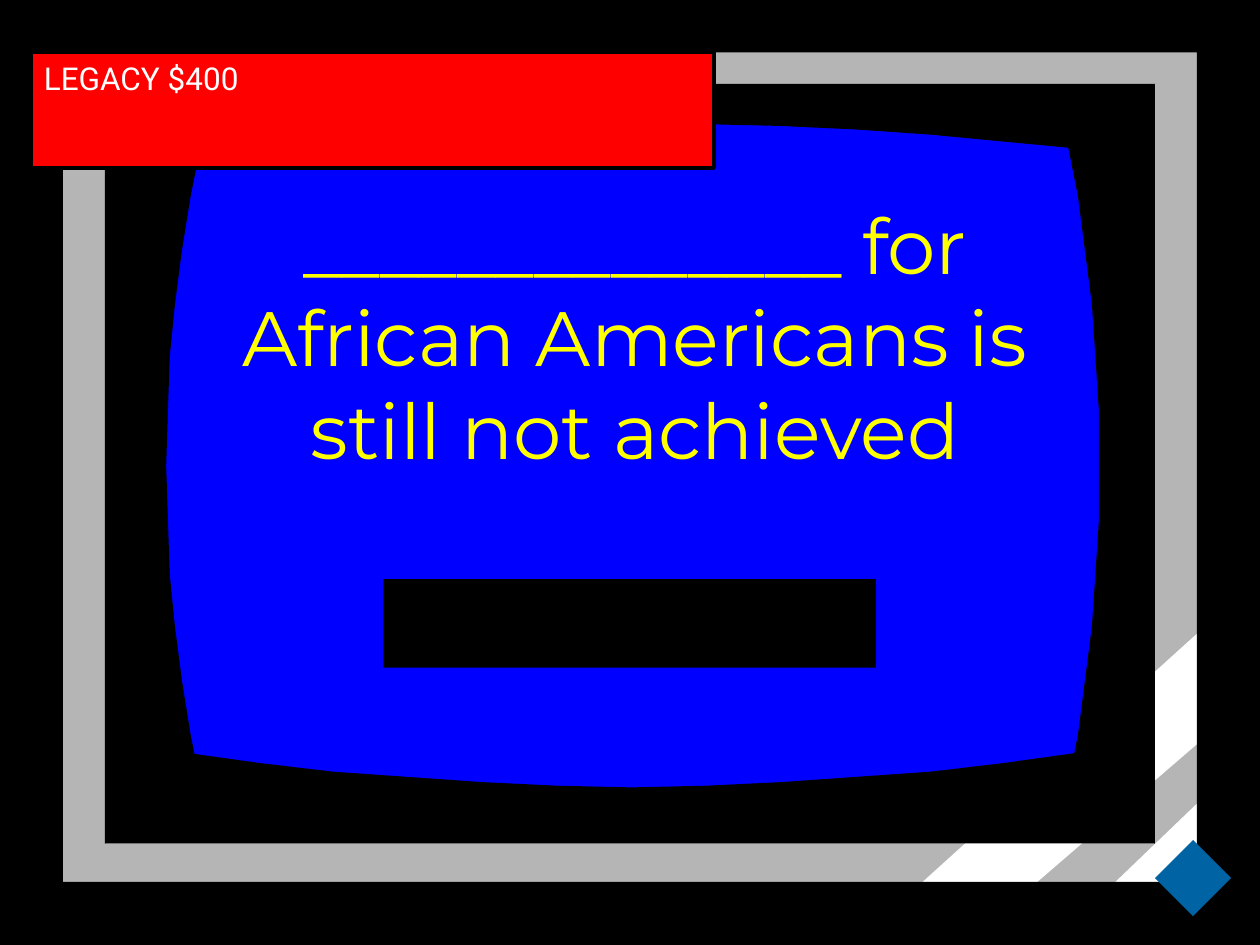
from dataclasses import dataclass

import pptx
import pptx.dml.color
import pptx.enum.shapes
import pptx.enum.text
import pptx.shapes.autoshape
import pptx.slide
import pptx.text.text
import pptx.util

BLACK = pptx.dml.color.RGBColor(0x00, 0x00, 0x00)
WHITE = pptx.dml.color.RGBColor(0xFF, 0xFF, 0xFF)
GREY = pptx.dml.color.RGBColor(0xB5, 0xB5, 0xB5)
BLUE = pptx.dml.color.RGBColor(0x00, 0x00, 0xFF)
YELLOW = pptx.dml.color.RGBColor(0xFF, 0xFF, 0x00)
RED = pptx.dml.color.RGBColor(0xFF, 0x00, 0x00)
BADGE_BLUE = pptx.dml.color.RGBColor(0x00, 0x63, 0xA3)

RECTANGLE = pptx.enum.shapes.MSO_SHAPE.RECTANGLE
DIAMOND = pptx.enum.shapes.MSO_SHAPE.DIAMOND
CURVE_STEPS = 12

Point = tuple[float, float]


@dataclass(frozen=True)
class Block:
    left: float
    top: float
    width: float
    height: float
    color: pptx.dml.color.RGBColor
    preset: pptx.enum.shapes.MSO_SHAPE = RECTANGLE


@dataclass(frozen=True)
class Outline:
    points: list[Point]
    color: pptx.dml.color.RGBColor


@dataclass(frozen=True)
class ScreenEdge:
    corners: tuple[Point, Point]
    apex: float
    bend: float
    middle: float
    reach: float
    vertical: bool


FRAME = Block(16.5, 9.5, 688.5, 530.5, GREY)
STRIPES = [
    Outline([(558.5, 533.5), (703.5, 407.5), (703.5, 344), (494, 533.5)], WHITE),
    Outline([(703.5, 487.5), (651.5, 533.5), (604, 535.5), (703.5, 440)], WHITE),
]
SCREEN = Block(77, 63.5, 552.5, 388.5, BLUE)

TOP_LEFT, TOP_RIGHT = (60.5, 47.5), (660.5, 47.5)
BOTTOM_LEFT, BOTTOM_RIGHT = (60.5, 482), (660.5, 482)
SCREEN_EDGES = [
    ScreenEdge((TOP_LEFT, BOTTOM_LEFT), 95, 20, 266, 184.5, True),
    ScreenEdge((TOP_RIGHT, BOTTOM_RIGHT), 628.5, -18.5, 266, 184.5, True),
    ScreenEdge((TOP_LEFT, TOP_RIGHT), 70.5, 14.5, 361, 256, False),
    ScreenEdge((BOTTOM_LEFT, BOTTOM_RIGHT), 449.5, -20, 361, 256, False),
]
SURROUND = [
    Outline([(0, 0), (0, 540), (720, 540), (700.5, 512), (36, 512), (36, 0)], BLACK),
    Outline([(720, 540), (720, 0), (0, 0), (18.5, 29.5), (684, 29.5), (684, 540)], BLACK),
]
BOTTOM_BAR = Block(14.5, 504, 690.5, 36, BLACK)
BADGE = Block(660, 480, 43.5, 43.5, BADGE_BLUE, DIAMOND)
CATEGORY = Block(18, 30, 390, 66, RED)
ANSWER_COVER = Block(219, 331, 281.5, 50.5, BLACK)


def paint(shape: pptx.shapes.autoshape.Shape, color: pptx.dml.color.RGBColor) -> None:
    shape.shadow.inherit = False
    shape.fill.solid()
    shape.fill.fore_color.rgb = color
    shape.line.fill.background()


def draw_block(slide: pptx.slide.Slide, block: Block) -> pptx.shapes.autoshape.Shape:
    lengths = (block.left, block.top, block.width, block.height)
    shape = slide.shapes.add_shape(block.preset, *map(pptx.util.Pt, lengths))
    paint(shape, block.color)
    return shape


def draw_outline(slide: pptx.slide.Slide, outline: Outline) -> None:
    start, *rest = outline.points
    builder = slide.shapes.build_freeform(*start, scale=pptx.util.Pt(1))
    builder.add_line_segments(rest, close=True)
    paint(builder.convert_to_shape(), outline.color)


def edge_outline(edge: ScreenEdge) -> Outline:
    first, last = edge.corners
    curve = []
    for step in range(CURVE_STEPS + 1):
        offset = 2 * step / CURVE_STEPS - 1
        across = edge.apex + edge.bend * offset**2
        along = edge.middle + edge.reach * offset
        curve.append((across, along) if edge.vertical else (along, across))
    return Outline([first, *curve, last], BLACK)


def write(
    frame: pptx.text.text.TextFrame,
    text: str,
    font_name: str,
    size: float,
    color: pptx.dml.color.RGBColor,
    alignment: pptx.enum.text.PP_ALIGN,
    anchor: pptx.enum.text.MSO_ANCHOR,
) -> None:
    frame.text = text
    frame.word_wrap = True
    frame.auto_size = pptx.enum.text.MSO_AUTO_SIZE.NONE
    frame.vertical_anchor = anchor
    paragraph = frame.paragraphs[0]
    paragraph.alignment = alignment
    font = paragraph.runs[0].font
    font.name = font_name
    font.size = pptx.util.Pt(size)
    font.color.rgb = color


def draw_television(slide: pptx.slide.Slide) -> None:
    draw_block(slide, FRAME)
    for stripe in STRIPES:
        draw_outline(slide, stripe)
    draw_block(slide, SCREEN)
    for edge in SCREEN_EDGES:
        draw_outline(slide, edge_outline(edge))
    for border in SURROUND:
        draw_outline(slide, border)
    draw_block(slide, BOTTOM_BAR)
    draw_block(slide, BADGE)


def place_question(slide: pptx.slide.Slide) -> None:
    question = slide.shapes.title
    question.left, question.top = pptx.util.Pt(114), pptx.util.Pt(30)
    question.width, question.height = pptx.util.Pt(498), pptx.util.Pt(324)
    write(
        question.text_frame,
        "______________ for African Americans is still not achieved",
        "Montserrat", 44, YELLOW,
        pptx.enum.text.PP_ALIGN.CENTER, pptx.enum.text.MSO_ANCHOR.MIDDLE,
    )
    slide.shapes.element.append(question.element)


def draw_category(slide: pptx.slide.Slide) -> None:
    category = draw_block(slide, CATEGORY)
    category.line.color.rgb = BLACK
    category.line.width = pptx.util.Pt(2.25)
    write(
        category.text_frame, "LEGACY $400", "Roboto", 18, WHITE,
        pptx.enum.text.PP_ALIGN.LEFT, pptx.enum.text.MSO_ANCHOR.TOP,
    )


def main() -> None:
    presentation = pptx.Presentation()
    presentation.slide_width = pptx.util.Pt(720)
    presentation.slide_height = pptx.util.Pt(540)
    slide = presentation.slides.add_slide(presentation.slide_layouts[5])
    draw_television(slide)
    place_question(slide)
    draw_category(slide)
    draw_block(slide, ANSWER_COVER)
    presentation.save("out.pptx")


if __name__ == "__main__":
    main()
